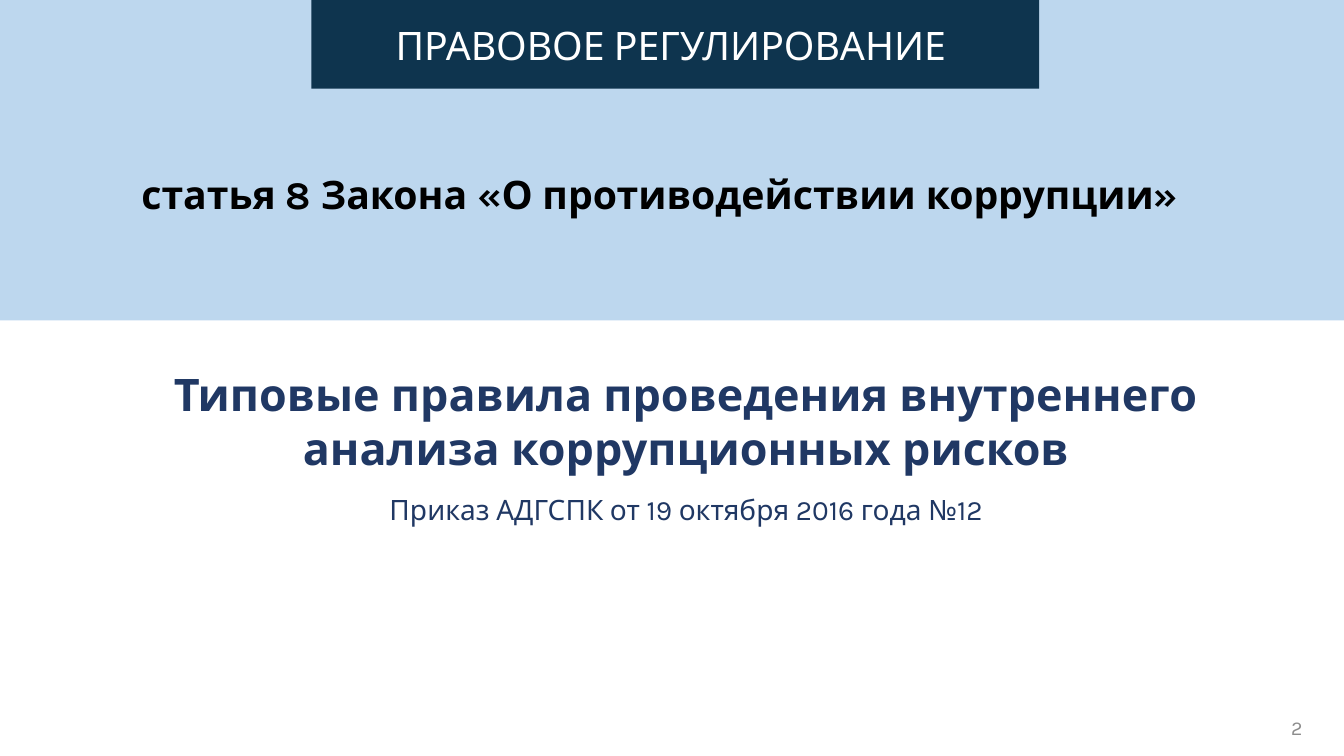
from dataclasses import dataclass

from pptx import Presentation
from pptx.dml.color import RGBColor
from pptx.enum.shapes import MSO_SHAPE
from pptx.enum.text import MSO_ANCHOR, PP_ALIGN
from pptx.shapes.autoshape import Shape
from pptx.slide import Slide
from pptx.util import Emu, Inches, Pt

WIDTH, HEIGHT = Inches(13.33), Inches(7.5)
FONT = "Karla"
COLOURS = {
    "sky": "BDD7EE",
    "deep": "0E344E",
    "navy": "203864",
    "black": "000000",
    "white": "FFFFFF",
    "grey": "8C8C8C",
}


@dataclass(frozen=True)
class Area:
    left: float
    top: float
    width: float
    height: float

    def box(self) -> tuple[Emu, Emu, Emu, Emu]:
        return (
            Emu(round(WIDTH * self.left / 100)),
            Emu(round(HEIGHT * self.top / 100)),
            Emu(round(WIDTH * self.width / 100)),
            Emu(round(HEIGHT * self.height / 100)),
        )


@dataclass(frozen=True)
class Line:
    text: str
    size: int
    colour: str
    bold: bool = False
    align: PP_ALIGN = PP_ALIGN.CENTER
    space_before: int = 0


@dataclass(frozen=True)
class Block:
    area: Area
    lines: tuple[Line, ...] = ()
    fill: str | None = None
    anchor: MSO_ANCHOR = MSO_ANCHOR.MIDDLE


BLOCKS = (
    Block(
        Area(75.15, 93.6, 22.5, 5.33),
        (Line("2", 14, "grey", align=PP_ALIGN.RIGHT),),
    ),
    Block(Area(0, 0, 100, 42.4), fill="sky"),
    Block(
        Area(23.18, 0, 54.15, 11.73),
        (Line("ПРАВОВОЕ РЕГУЛИРОВАНИЕ ", 28, "white"),),
        fill="deep",
    ),
    Block(
        Area(8.33, 21.87, 81.53, 7.6),
        (Line("статья 8 Закона «О противодействии коррупции»", 28, "black", True),),
    ),
    Block(
        Area(11.33, 47.87, 79.43, 29.87),
        (
            Line(
                "Типовые правила проведения внутреннего анализа коррупционных рисков",
                32, "navy", True,
            ),
            Line("Приказ АДГСПК от 19 октября 2016 года №12", 20, "navy", space_before=13),
        ),
        anchor=MSO_ANCHOR.TOP,
    ),
)


def colour(name: str) -> RGBColor:
    return RGBColor.from_string(COLOURS[name])


def write_lines(holder: Shape, block: Block) -> None:
    frame = holder.text_frame
    frame.word_wrap = True
    frame.vertical_anchor = block.anchor
    for index, line in enumerate(block.lines):
        paragraph = frame.add_paragraph() if index else frame.paragraphs[0]
        paragraph.text = line.text
        paragraph.alignment = line.align
        paragraph.space_before = Pt(line.space_before)
        paragraph.font.name = FONT
        paragraph.font.size = Pt(line.size)
        paragraph.font.bold = line.bold
        paragraph.font.color.rgb = colour(line.colour)


def draw_block(slide: Slide, block: Block) -> None:
    if block.fill:
        holder = slide.shapes.add_shape(MSO_SHAPE.RECTANGLE, *block.area.box())
        holder.shadow.inherit = False
        holder.fill.solid()
        holder.fill.fore_color.rgb = colour(block.fill)
        holder.line.fill.background()
    else:
        holder = slide.shapes.add_textbox(*block.area.box())
    write_lines(holder, block)


def main() -> None:
    presentation = Presentation()
    presentation.slide_width, presentation.slide_height = WIDTH, HEIGHT
    slide = presentation.slides.add_slide(presentation.slide_layouts[6])
    for block in BLOCKS:
        draw_block(slide, block)
    presentation.save("out.pptx")


if __name__ == "__main__":
    main()
